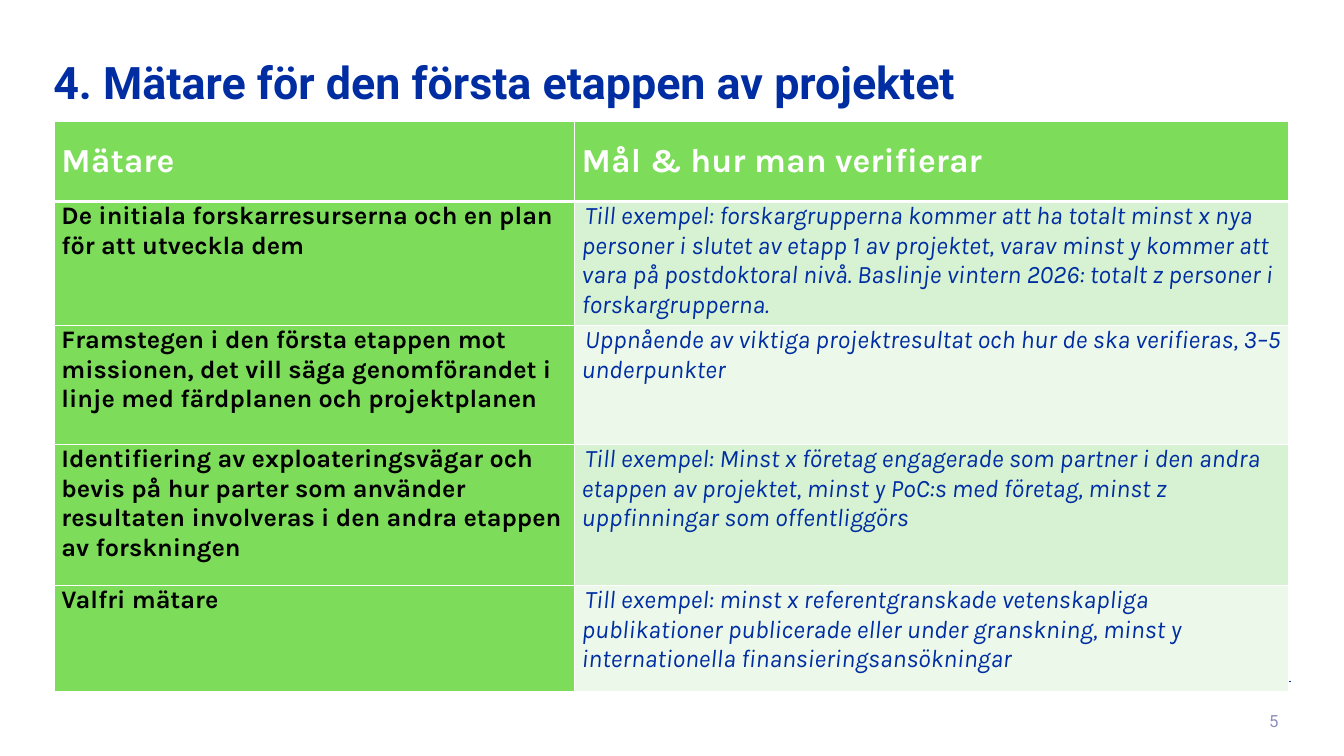
from lxml import etree
from pptx import Presentation
from pptx import util as u
from pptx.dml.color import RGBColor
from pptx.enum import shapes, text
from pptx.oxml.ns import qn

COLORS = {
    "navy": "002EA2", "muted": "8C8FBF", "white": "FFFFFF", "black": "000000",
    "green": "7DDC5A", "band_dark": "D7F2D2", "band_light": "ECF9EA",
}
HEADINGS = ("Mätare", "Mål & hur man verifierar")
METRICS = [
    ("De initiala forskarresurserna och en plan för att utveckla dem",
     "Till exempel: forskargrupperna kommer att ha totalt minst x nya personer i slutet "
     "av etapp 1 av projektet, varav minst y kommer att vara på postdoktoral nivå. "
     "Baslinje vintern 2026: totalt z personer i forskargrupperna."),
    ("Framstegen i den första etappen mot missionen, det vill säga genomförandet i linje "
     "med färdplanen och projektplanen",
     "Uppnående av viktiga projektresultat och hur de ska verifieras, 3–5 underpunkter"),
    ("Identifiering av exploateringsvägar och bevis på hur parter som använder resultaten "
     "involveras i den andra etappen av forskningen",
     "Till exempel: Minst x företag engagerade som partner i den andra etappen av projektet, "
     "minst y PoC:s med företag, minst z uppfinningar som offentliggörs"),
    ("Valfri mätare",
     "Till exempel: minst x referentgranskade vetenskapliga publikationer publicerade eller "
     "under granskning, minst y internationella finansieringsansökningar"),
]
COLUMN_WIDTHS = (5.16, 7.08)
ROW_HEIGHTS = (0.8, 1.23, 1.18, 1.4, 1.05)


def rgb(name):
    return RGBColor.from_string(COLORS[name])


def write(frame, words, size, color, font="Karla", bold=False, italic=False,
          align=text.PP_ALIGN.LEFT, spacing=None, indent=0):
    frame.word_wrap = True
    paragraph = frame.paragraphs[0]
    paragraph.alignment = align
    if spacing:
        paragraph.line_spacing = spacing
    if indent:
        properties = paragraph._p.get_or_add_pPr()
        properties.set("marL", "0")
        properties.set("indent", str(u.Inches(indent)))
    run = paragraph.add_run()
    run.text = words
    run.font.name = font
    run.font.size = u.Pt(size)
    run.font.bold = bold
    run.font.italic = italic
    run.font.color.rgb = rgb(color)


def add_label(slide, box, words, **style):
    frame = slide.shapes.add_textbox(*map(u.Inches, box)).text_frame
    frame.vertical_anchor = text.MSO_ANCHOR.MIDDLE
    write(frame, words, font="Roboto", **style)


def add_rule(slide, left, top, width):
    rule = slide.shapes.add_connector(
        shapes.MSO_CONNECTOR.STRAIGHT, u.Inches(left), u.Inches(top),
        u.Inches(left + width), u.Inches(top))
    rule.line.color.rgb = rgb("navy")
    rule.line.width = u.Pt(0.85)
    etree.SubElement(rule._element.spPr, qn("a:effectLst"))


def style_cell(cell, fill, top=1, bottom=1):
    cell.margin_left = cell.margin_right = u.Inches(0.07)
    cell.margin_top = cell.margin_bottom = 0
    properties = cell._tc.get_or_add_tcPr()
    for side, width in (("L", 1), ("R", 1), ("T", top), ("B", bottom)):
        border = etree.SubElement(properties, qn(f"a:ln{side}"), w=str(u.Pt(width)))
        paint = etree.SubElement(border, qn("a:solidFill"))
        etree.SubElement(paint, qn("a:srgbClr"), val=COLORS["white"])
    cell.fill.solid()
    cell.fill.fore_color.rgb = rgb(fill)


def add_metrics_table(slide, left, top):
    table = slide.shapes.add_table(
        len(ROW_HEIGHTS), len(COLUMN_WIDTHS), u.Inches(left), u.Inches(top),
        u.Inches(sum(COLUMN_WIDTHS)), u.Inches(sum(ROW_HEIGHTS))).table
    for column, width in zip(table.columns, COLUMN_WIDTHS):
        column.width = u.Inches(width)
    for row, height in zip(table.rows, ROW_HEIGHTS):
        row.height = u.Inches(height)

    for index, heading in enumerate(HEADINGS):
        cell = table.cell(0, index)
        style_cell(cell, "green", bottom=3)
        cell.vertical_anchor = text.MSO_ANCHOR.MIDDLE
        write(cell.text_frame, heading, 24, "white", bold=True)

    for index, (metric, goal) in enumerate(METRICS, start=1):
        top_border = 3 if index == 1 else 1
        metric_cell, goal_cell = table.cell(index, 0), table.cell(index, 1)
        style_cell(metric_cell, "green", top=top_border)
        write(metric_cell.text_frame, metric, 18, "black", bold=True)
        style_cell(goal_cell, "band_dark" if index % 2 else "band_light", top=top_border)
        write(goal_cell.text_frame, goal, 18, "navy", italic=True, indent=0.03)


def main():
    deck = Presentation()
    deck.slide_width, deck.slide_height = u.Inches(13.33), u.Inches(7.5)
    slide = deck.slides.add_slide(deck.slide_layouts[6])
    add_rule(slide, 0.55, 6.76, 12.25)
    add_label(slide, (0.43, 0.12, 12.25, 1.45),
              "4. Mätare för den första etappen av projektet",
              size=32, color="navy", bold=True, spacing=0.9)
    add_label(slide, (11.04, 6.95, 1.74, 0.4), "5",
              size=12, color="muted", align=text.PP_ALIGN.RIGHT)
    add_metrics_table(slide, 0.54, 1.2)
    deck.save("out.pptx")


if __name__ == "__main__":
    main()
